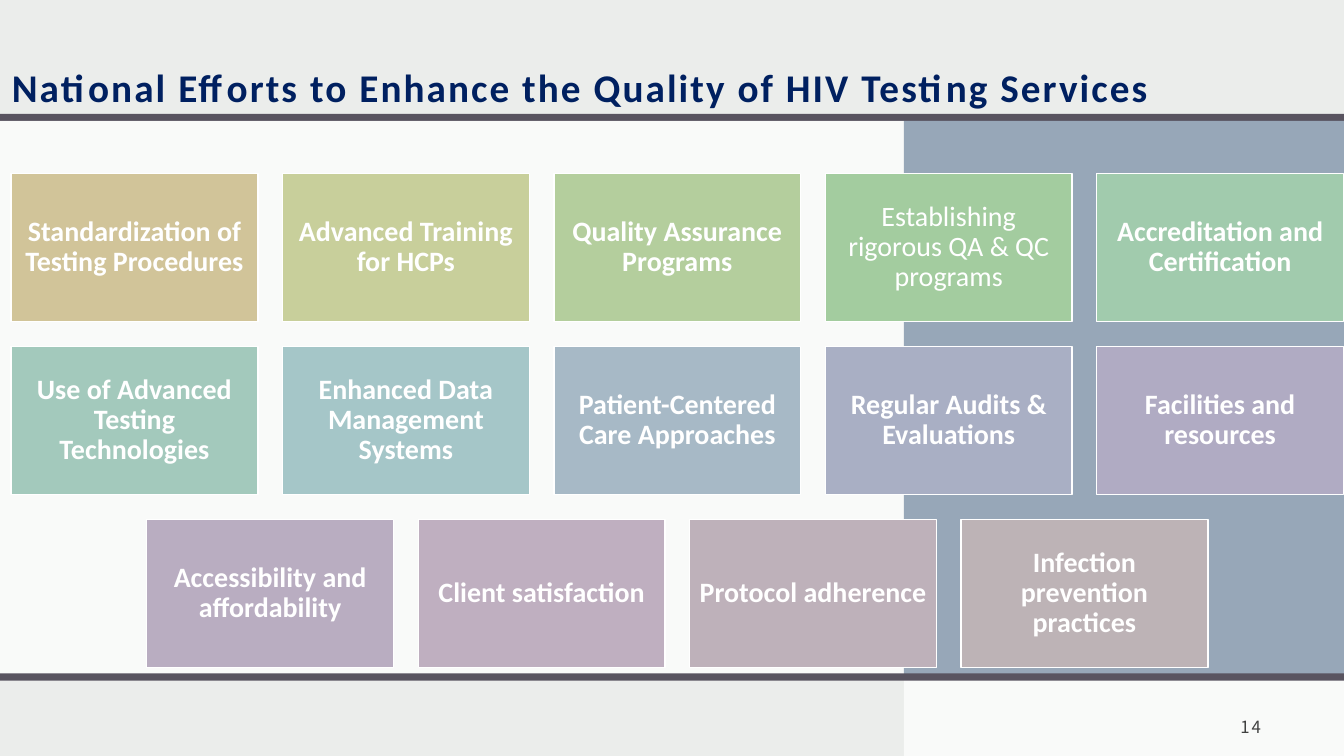
from pptx import Presentation
from pptx.dml.color import RGBColor
from pptx.enum.shapes import MSO_SHAPE
from pptx.enum.text import MSO_ANCHOR as ANCHOR, PP_ALIGN as ALIGN
from pptx.oxml.ns import qn
from pptx.util import Cm, Pt
from lxml import etree

COLORS = {"page": "EBEDEB", "white": "FFFFFF", "rule": "595460",
          "panel": "97A7B8", "title": "002060", "number": "404040"}

# Each row: (label, fill, bold)
ROWS = [
    [("Standardization of Testing Procedures", "D1C499", True),
     ("Advanced Training for HCPs", "C8CF9B", True),
     ("Quality Assurance Programs", "B4CE9D", True),
     ("Establishing rigorous QA & QC programs", "A3CC9F", False),
     ("Accreditation and Certification", "A1CBAD", True)],
    [("Use of Advanced Testing Technologies", "A3C9BC", True),
     ("Enhanced Data Management Systems", "A5C6C8", True),
     ("Patient-Centered Care Approaches", "A7B9C6", True),
     ("Regular Audits & Evaluations", "A9AFC4", True),
     ("Facilities and resources", "B0ABC3", True)],
    [("Accessibility and affordability", "B9ADC1", True),
     ("Client satisfaction", "BFAFC0", True),
     ("Protocol adherence", "BEB1BA", True),
     ("Infection prevention practices", "BDB3B6", True)],
]


def add_rect(left, top, width, height, fill, alpha=None):
    sp = s.shapes.add_shape(MSO_SHAPE.RECTANGLE, Cm(left), Cm(top), Cm(width), Cm(height))
    sp.shadow.inherit = False
    sp.fill.solid()
    sp.fill.fore_color.rgb = RGBColor.from_string(fill)
    sp.line.fill.background()
    if alpha:
        clr = sp._element.spPr.find(qn("a:solidFill")).find(qn("a:srgbClr"))
        etree.SubElement(clr, qn("a:alpha")).set("val", str(alpha * 1000))
    return sp


def set_text(sp, text, align, anchor, insets, color, spacing=0, **font):
    """Fill a shape with one run; insets are left, top, right, bottom in cm."""
    tf = sp.text_frame
    tf.word_wrap = True
    tf.vertical_anchor = anchor
    for side, inset in zip(("left", "top", "right", "bottom"), insets):
        setattr(tf, f"margin_{side}", Cm(inset))
    p = tf.paragraphs[0]
    p.alignment = align
    r = p.add_run()
    r.text = text
    for name, value in font.items():
        setattr(r.font, name, value)
    r.font.color.rgb = RGBColor.from_string(color)
    if spacing:
        r.font._element.set("spc", str(spacing))
    return p


prs = Presentation()
prs.slide_width, prs.slide_height = Cm(33.87), Cm(19.05)
s = prs.slides.add_slide(prs.slide_layouts[6])
s.background.fill.solid()
s.background.fill.fore_color.rgb = RGBColor.from_string(COLORS["page"])

# Background bands and rules
SPLIT, WIDTH = 22.78, 33.87
BODY_TOP, BODY_HEIGHT = 3.05, 13.94
add_rect(0, 2.87, WIDTH, 0.18, COLORS["rule"])
add_rect(0, BODY_TOP, SPLIT, BODY_HEIGHT, COLORS["white"], alpha=75)
add_rect(SPLIT, 17.12, WIDTH - SPLIT, 1.93, COLORS["white"], alpha=75)
add_rect(SPLIT, BODY_TOP, WIDTH - SPLIT, BODY_HEIGHT, COLORS["panel"])
add_rect(0, 16.97, WIDTH, 0.18, COLORS["rule"])

# Title and slide number
FRAME_INSETS = (0.3, 0.3, 0.3, 0.25)
title = s.shapes.add_textbox(0, 0, Cm(WIDTH), Cm(3.02))
set_text(title, "National Efforts to Enhance the Quality of HIV Testing Services",
         ALIGN.LEFT, ANCHOR.BOTTOM, FRAME_INSETS, COLORS["title"], spacing=150,
         name="Calibri", size=Pt(28), bold=True)
number = s.shapes.add_textbox(Cm(29.36), Cm(17.53), Cm(2.72), Cm(1.27))
set_text(number, "14", ALIGN.RIGHT, ANCHOR.BOTTOM, FRAME_INSETS, COLORS["number"],
         spacing=150, name="Noto Sans CJK JP", size=Pt(12))

# Cards: a shorter row is centred under the full ones
LEFT, TOP, CARD_W, CARD_H = 0.28, 4.37, 6.22, 3.73
STEP_X, STEP_Y = 6.84, 4.36
for i, row in enumerate(ROWS):
    row_left = LEFT + (len(ROWS[0]) - len(row)) * STEP_X / 2
    for j, (label, fill, bold) in enumerate(row):
        card = add_rect(row_left + j * STEP_X, TOP + i * STEP_Y, CARD_W, CARD_H, fill)
        card.line.color.rgb = RGBColor.from_string(COLORS["white"])
        card.line.width = Pt(1)
        p = set_text(card, label, ALIGN.CENTER, ANCHOR.MIDDLE, [0.2] * 4,
                     COLORS["white"], name="Calibri", size=Pt(20), bold=bold)
        p.line_spacing = 0.9

prs.save("out.pptx")
